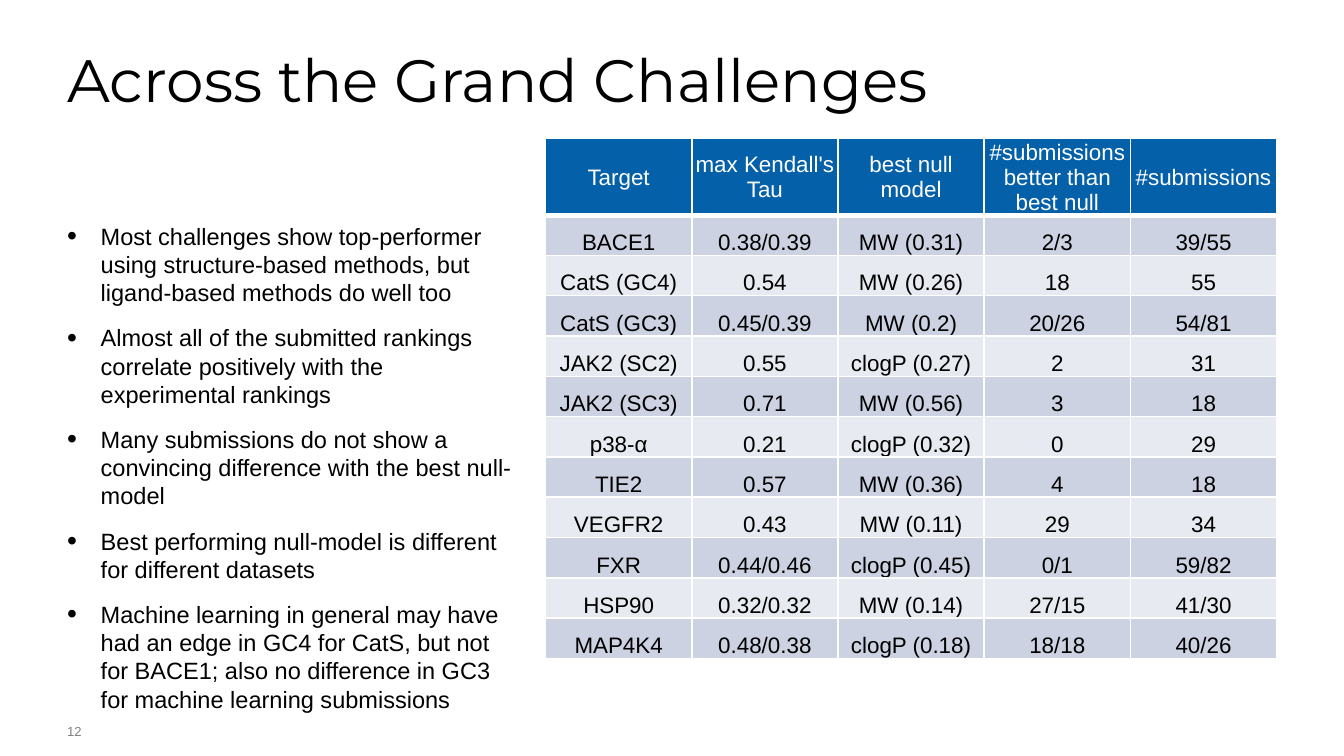
from lxml.etree import SubElement
from pptx import Presentation
from pptx.dml.color import RGBColor
from pptx.enum.text import MSO_ANCHOR, MSO_AUTO_SIZE, PP_ALIGN
from pptx.oxml.ns import qn
from pptx.util import Inches, Pt

BULLETS = [
    "Most challenges show top-performer using structure-based methods, but ligand-based methods do well too",
    "Almost all of the submitted rankings correlate positively with the experimental rankings",
    "Many submissions do not show a convincing difference with the best null-model",
    "Best performing null-model is different for different datasets",
    "Machine learning in general may have had an edge in GC4 for CatS, but not for BACE1; "
    "also no difference in GC3 for machine learning submissions",
]
ROWS = [
    ("Target", "max Kendall's Tau", "best null model", "#submissions better than best null", "#submissions"),
    ("BACE1", "0.38/0.39", "MW (0.31)", "2/3", "39/55"),
    ("CatS (GC4)", "0.54", "MW (0.26)", "18", "55"),
    ("CatS (GC3)", "0.45/0.39", "MW (0.2)", "20/26", "54/81"),
    ("JAK2 (SC2)", "0.55", "clogP (0.27)", "2", "31"),
    ("JAK2 (SC3)", "0.71", "MW (0.56)", "3", "18"),
    ("p38-α", "0.21", "clogP (0.32)", "0", "29"),
    ("TIE2", "0.57", "MW (0.36)", "4", "18"),
    ("VEGFR2", "0.43", "MW (0.11)", "29", "34"),
    ("FXR", "0.44/0.46", "clogP (0.45)", "0/1", "59/82"),
    ("HSP90", "0.32/0.32", "MW (0.14)", "27/15", "41/30"),
    ("MAP4K4", "0.48/0.38", "clogP (0.18)", "18/18", "40/26"),
]


def color(code):
    return RGBColor.from_string(code)


class Deck:
    font, ink, white, gray = "Arial", "000000", "FFFFFF", "7F7F7F"
    head, bands = "0460A9", ("E7EAF1", "CCD2E2")

    def __init__(self, wide, high):
        self.prs = Presentation()
        self.prs.slide_width, self.prs.slide_height = wide, high
        self.slide = self.prs.slides.add_slide(self.prs.slide_layouts[5])

    def style(self, para, size, tone=None, face=None):
        for run in para.runs:
            run.font.size = Pt(size)
            run.font.name = face or self.font
            run.font.color.rgb = color(tone or self.ink)

    def frame(self, shape):
        frame = shape.text_frame
        frame.word_wrap = True
        frame.auto_size = MSO_AUTO_SIZE.NONE
        frame.vertical_anchor = MSO_ANCHOR.TOP
        frame.margin_left = frame.margin_right = 0
        frame.margin_top = frame.margin_bottom = 0
        return frame

    def title(self, text, box):
        shape = self.slide.shapes.title
        shape.left, shape.top, shape.width, shape.height = map(Inches, box)
        frame = self.frame(shape)
        frame.text = text
        para = frame.paragraphs[0]
        para.alignment = PP_ALIGN.LEFT
        para.line_spacing = 0.9
        self.style(para, 32, face="Montserrat")

    def text(self, text, box, size, tone=None):
        frame = self.frame(self.slide.shapes.add_textbox(*map(Inches, box)))
        frame.text = text
        for para in frame.paragraphs:
            self.style(para, size, tone)
        return frame

    def list(self, items, box, size):
        frame = self.text("\n".join(items), box, size)
        for i, para in enumerate(frame.paragraphs):
            para.space_before = Pt(9 if i else 0)
            props = para._p.get_or_add_pPr()
            props.set("marL", str(Inches(0.25)))
            props.set("indent", str(-Inches(0.25)))
            SubElement(props, qn("a:buSzPct"), val="120000")
            SubElement(props, qn("a:buFont"), typeface=self.font)
            SubElement(props, qn("a:buChar"), char="•")

    def border(self, cell, row):
        props = cell._tc.get_or_add_tcPr()
        thick = {"L": 1, "R": 1, "T": 3 if row == 1 else 1, "B": 3 if row == 0 else 1}
        for side, width in thick.items():
            line = SubElement(props, qn("a:ln" + side), w=str(Pt(width)))
            fill = SubElement(line, qn("a:solidFill"))
            SubElement(fill, qn("a:srgbClr"), val=self.white)

    def cell(self, cell, text, row):
        self.border(cell, row)
        cell.fill.solid()
        cell.fill.fore_color.rgb = color(self.bands[row % 2] if row else self.head)
        cell.margin_left = cell.margin_right = cell.margin_top = Inches(0.01)
        cell.margin_bottom = 0
        cell.vertical_anchor = MSO_ANCHOR.BOTTOM if row else MSO_ANCHOR.MIDDLE
        cell.text_frame.text = text
        para = cell.text_frame.paragraphs[0]
        para.alignment = PP_ALIGN.CENTER
        self.style(para, 12, self.ink if row else self.white)

    def table(self, rows, box, top_row, row_high):
        grid = self.slide.shapes.add_table(len(rows), len(rows[0]), *map(Inches, box)).table
        for r, row in enumerate(rows):
            grid.rows[r].height = Inches(row_high if r else top_row)
            for c, text in enumerate(row):
                self.cell(grid.cell(r, c), text, r)


def main():
    # Widescreen, 16 to 9
    deck = Deck(Inches(10), Inches(10 * 9 / 16))
    # Title
    deck.title("Across the Grand Challenges", (0.5, 0.38, 9, 1.05))
    # Findings
    deck.list(BULLETS, (0.5, 1.65, 3.36, 3.29), 12.6)
    # Results by target
    deck.table(ROWS, (4.06, 1.03, 5.44, 3.86), 0.56, 0.3)
    # Slide number
    deck.text("12", (0.5, 5.38, 0.25, 0.25), 7, deck.gray)
    deck.prs.save("out.pptx")


if __name__ == "__main__":
    main()
